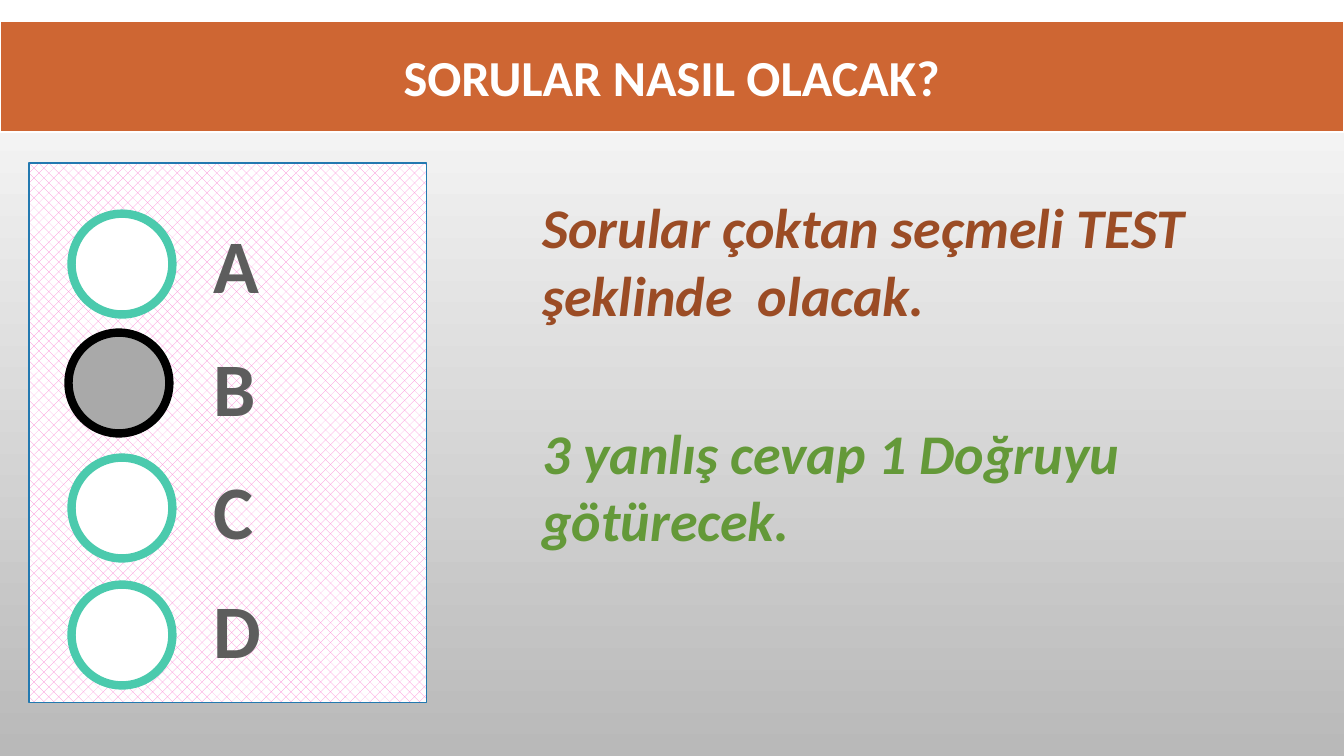
from pptx import Presentation
from pptx import util as u
from pptx.dml.color import RGBColor
from pptx.enum import dml, shapes, text

WHITE = RGBColor(0xFF, 0xFF, 0xFF)
BLACK = RGBColor(0, 0, 0)
SHADE = RGBColor(0xB9, 0xB9, 0xB9)
ORANGE = RGBColor(0xCE, 0x66, 0x33)
PINK = RGBColor(0xFB, 0x85, 0xD4)
BLUE = RGBColor(0x23, 0x79, 0xB0)
TEAL = RGBColor(0x4B, 0xCA, 0xAD)
MARKED = RGBColor(0xA9, 0xA9, 0xA9)
LETTER = RGBColor(0x5D, 0x5D, 0x5D)
BROWN = RGBColor(0x9B, 0x4C, 0x25)
GREEN = RGBColor(0x64, 0x99, 0x39)

TITLE = "SORULAR NASIL OLACAK?"
STATEMENTS = [
    ("Sorular çoktan seçmeli TEST şeklinde  olacak.", BROWN, 1.84),
    ("3 yanlış cevap 1 Doğruyu götürecek.", GREEN, 4.08),
]
OPTIONS = [
    ("A", 0.71, 2.12, 2.11, WHITE, TEAL),
    ("B", 0.68, 3.3, 3.33, MARKED, BLACK),
    ("C", 0.71, 4.54, 4.55, WHITE, TEAL),
    ("D", 0.71, 5.8, 5.73, WHITE, TEAL),
]
WIDTH, HEIGHT = 13.33, 7.5
LETTER_LEFT, STATEMENT_LEFT = 2.02, 5.25


def box(*lengths):
    return [u.Inches(v) for v in lengths]


def outline(sp, color, width):
    sp.line.color.rgb = color
    sp.line.width = u.Pt(width)


def add_figure(s, kind, at, color, width):
    sp = s.shapes.add_shape(kind, *box(*at))
    sp.shadow.inherit = False
    outline(sp, color, width)
    return sp


def write(sp, words, size, color, italic=False, align=text.PP_ALIGN.LEFT):
    tf = sp.text_frame
    tf.word_wrap = True
    tf.auto_size = text.MSO_AUTO_SIZE.NONE
    tf.vertical_anchor = text.MSO_ANCHOR.MIDDLE
    p = tf.paragraphs[0]
    p.text = words
    p.alignment = align
    p.font.name = "Calibri"
    p.font.size = u.Pt(size)
    p.font.bold = True
    p.font.italic = italic
    p.font.color.rgb = color
    return tf


def main():
    prs = Presentation()
    prs.slide_width, prs.slide_height = box(WIDTH, HEIGHT)
    s = prs.slides.add_slide(prs.slide_layouts[5])

    bg = s.background.fill
    bg.gradient()
    bg.gradient_angle = 270
    for stop, color, position in zip(bg.gradient_stops, (WHITE, SHADE), (0, 1)):
        stop.color.rgb = color
        stop.position = position

    title = s.shapes.title
    title.left, title.top, title.width, title.height = box(0, 0.21, WIDTH, 1.1)
    title.fill.solid()
    title.fill.fore_color.rgb = ORANGE
    outline(title, WHITE, 1.75)
    write(title, TITLE, 36, WHITE, align=text.PP_ALIGN.CENTER)

    panel = add_figure(s, shapes.MSO_SHAPE.RECTANGLE, (0.29, 1.62, 3.94, 5.35), BLUE, 1.25)
    panel.fill.patterned()
    panel.fill.pattern = dml.MSO_PATTERN.PERCENT_30
    panel.fill.fore_color.rgb = PINK
    panel.fill.back_color.rgb = WHITE

    for letter, left, top, letter_top, fill, ring in OPTIONS:
        bubble = add_figure(s, shapes.MSO_SHAPE.OVAL, (left, top, 1, 1), ring, 6)
        bubble.fill.solid()
        bubble.fill.fore_color.rgb = fill
        label = s.shapes.add_textbox(*box(LETTER_LEFT, letter_top, 0.9, 1.01))
        write(label, letter, 54, LETTER)

    for words, color, top in STATEMENTS:
        statement = s.shapes.add_textbox(*box(STATEMENT_LEFT, top, 7.09, 1.48))
        tf = write(statement, words, 40, color, italic=True)
        tf.margin_left = tf.margin_right = u.Inches(0.13)
        tf.margin_top = tf.margin_bottom = u.Inches(0.07)

    prs.save("out.pptx")


if __name__ == "__main__":
    main()
